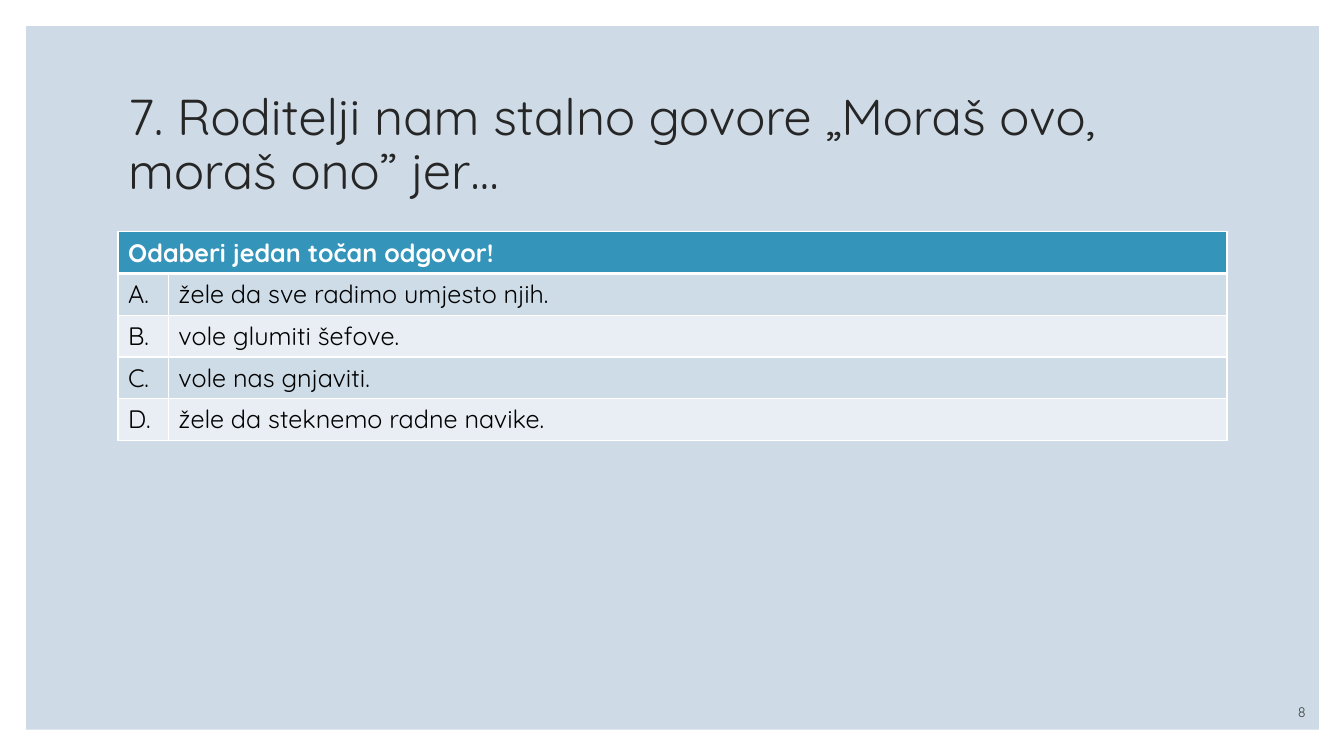
import pptx
import pptx.util
import pptx.dml.color
import pptx.enum.shapes
import pptx.enum.text
import pptx.oxml
import pptx.oxml.ns

Inches, Pt = pptx.util.Inches, pptx.util.Pt
RGBColor = pptx.dml.color.RGBColor
ALIGN, ANCHOR = pptx.enum.text.PP_ALIGN, pptx.enum.text.MSO_ANCHOR

WHITE = RGBColor(0xFF, 0xFF, 0xFF)
BLACK = RGBColor(0x00, 0x00, 0x00)
PANEL = RGBColor(0xCE, 0xDB, 0xE6)
TITLE = RGBColor(0x26, 0x26, 0x26)
NUMBER = RGBColor(0x40, 0x40, 0x40)
HEADER = RGBColor(0x34, 0x94, 0xBA)
BANDS = (RGBColor(0xCE, 0xDC, 0xE7), RGBColor(0xE8, 0xEE, 0xF3))

ANSWERS = (
    "žele da sve radimo umjesto njih.",
    "vole glumiti šefove.",
    "vole nas gnjaviti.",
    "žele da steknemo radne navike.",
)


class QuizSlide:
    font = "Quicksand"

    def __init__(self, deck):
        self.slide = deck.slides.add_slide(deck.slide_layouts[5])

    def add_text(self, frame, text, size, color, bold=False, **paragraph_format):
        paragraph = frame.paragraphs[0]
        for name, value in paragraph_format.items():
            setattr(paragraph, name, value)
        run = paragraph.add_run()
        run.text = text
        run.font.color.rgb = color
        for name, value in {"name": self.font, "size": Pt(size), "bold": bold}.items():
            setattr(run.font, name, value)

    def place(self, shape, left, top, width, height):
        box = {"left": left, "top": top, "width": width, "height": height}
        for name, value in box.items():
            setattr(shape, name, Inches(value))

    def panel(self, *box):
        backdrop = self.slide.shapes.add_shape(
            pptx.enum.shapes.MSO_SHAPE.RECTANGLE, *map(Inches, box))
        backdrop.shadow.inherit = False
        backdrop.fill.solid()
        backdrop.fill.fore_color.rgb = PANEL
        backdrop.line.fill.background()
        # Send behind the title
        self.slide.shapes._spTree.insert(2, backdrop._element)

    def title(self, text, *box):
        question = self.slide.shapes.title
        self.place(question, *box)
        frame = question.text_frame
        settings = {"word_wrap": True, "vertical_anchor": ANCHOR.MIDDLE,
                    "auto_size": pptx.enum.text.MSO_AUTO_SIZE.NONE}
        for name, value in settings.items():
            setattr(frame, name, value)
        self.add_text(frame, text, 36, TITLE, alignment=ALIGN.LEFT, line_spacing=0.9)

    def cell(self, cell, text, fill, color, bold=False, top=1, bottom=1):
        cell.fill.solid()
        cell.fill.fore_color.rgb = fill
        if text:
            self.add_text(cell.text_frame, text, 18, color, bold)
        # Borders precede the fill in the cell properties
        properties = cell._tc.get_or_add_tcPr()
        borders = {"lnL": 1, "lnR": 1, "lnT": top, "lnB": bottom}
        for position, (side, width) in enumerate(borders.items()):
            properties.insert(position, pptx.oxml.parse_xml(
                f'<a:{side} {pptx.oxml.ns.nsdecls("a")} w="{Pt(width)}"><a:solidFill>'
                f'<a:srgbClr val="{WHITE}"/></a:solidFill></a:{side}>'))

    def answer_table(self, heading, answers, left, top, widths, row_height):
        rows = len(answers) + 1
        table = self.slide.shapes.add_table(
            rows, len(widths), Inches(left), Inches(top),
            Inches(sum(widths)), Inches(row_height * rows)).table
        for column, width in zip(table.columns, widths):
            column.width = Inches(width)
        table.cell(0, 0).merge(table.cell(0, 1))
        for column, text in enumerate((heading, "")):
            self.cell(table.cell(0, column), text, HEADER, WHITE, bold=True, bottom=3)
        for index, answer in enumerate(answers):
            for column, text in enumerate((f"{'ABCD'[index]}.", answer)):
                self.cell(table.cell(index + 1, column), text, BANDS[index % 2],
                          BLACK, top=1 if index else 3)

    def page_number(self, text, *box):
        frame = self.slide.shapes.add_textbox(*map(Inches, box)).text_frame
        frame.word_wrap = True
        frame.vertical_anchor = ANCHOR.BOTTOM
        self.add_text(frame, text, 10, NUMBER, alignment=ALIGN.RIGHT)


def main():
    deck = pptx.Presentation()
    deck.slide_width, deck.slide_height = Inches(13.33), Inches(7.5)
    quiz = QuizSlide(deck)

    # Background and question
    quiz.panel(0.26, 0.26, 12.82, 6.98)
    quiz.title("7. Roditelji nam stalno govore „Moraš ovo, moraš ono” jer…",
               1.17, 0.7, 11, 1.5)

    # Answers
    quiz.answer_table("Odaberi jedan točan odgovor!", ANSWERS,
                      1.17, 2.3, (0.5, 10.5), 0.41)

    # Footer
    quiz.page_number("8", 11.45, 6.9, 1.6, 0.3)
    deck.save("out.pptx")


if __name__ == "__main__":
    main()
